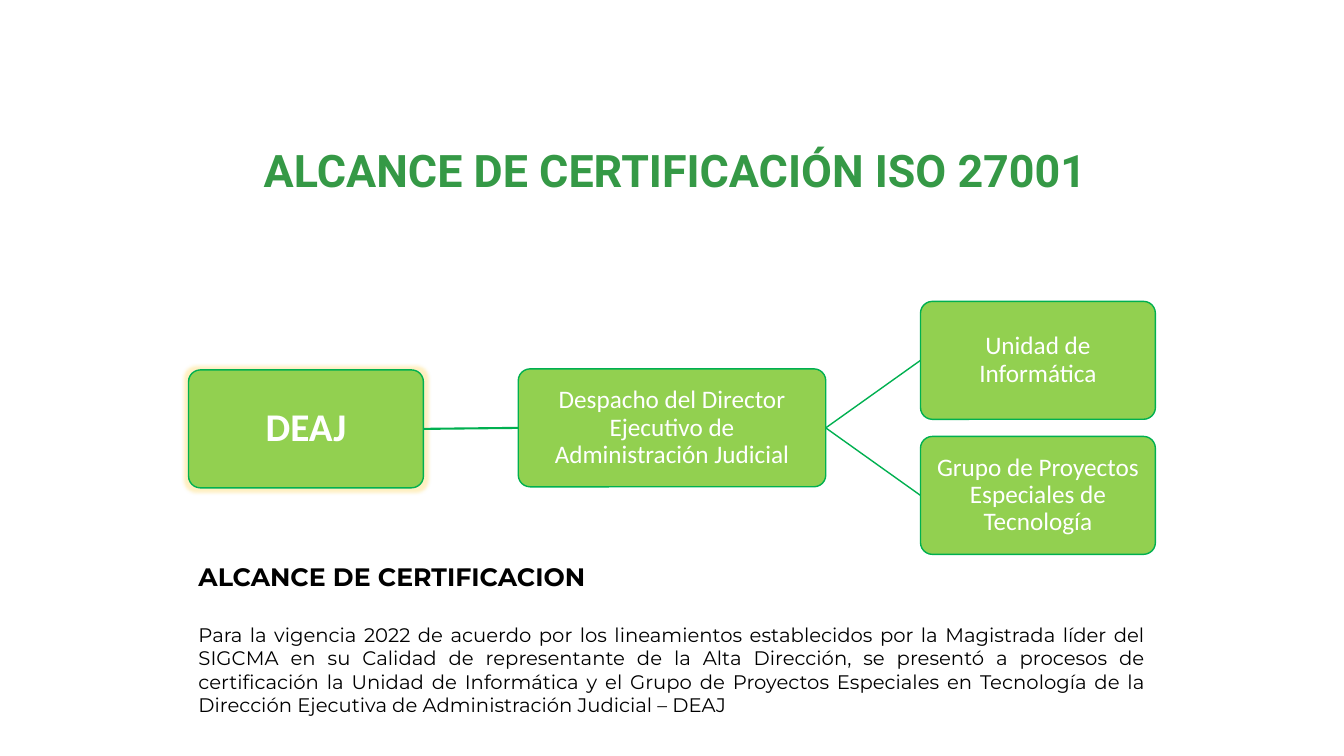
from dataclasses import dataclass

from lxml import etree
from pptx import Presentation
from pptx import util as u
from pptx.dml.color import RGBColor
from pptx.enum import shapes, text
from pptx.oxml import ns
from pptx.shapes.autoshape import Shape
from pptx.slide import Slide
from pptx.text.text import _Paragraph as Paragraph

COLORS = {
    "title": "359946",
    "box": "92D050",
    "border": "00B050",
    "box_text": "FFFFFF",
    "body": "000000",
    "glow": "FFD966",
}
BOX_HEIGHT = 1.17
LEFT, RIGHT = 1.87, 11.46


@dataclass(frozen=True)
class Box:
    label: str
    left: float
    top: float
    width: float = 2.33
    size: int = 18
    bold: bool = False
    glow: bool = False


@dataclass(frozen=True)
class Link:
    start: int
    end: int
    width: float = 1


BOXES = [
    Box("DEAJ", LEFT, 3.67, size=28, bold=True, glow=True),
    Box("Despacho del Director Ejecutivo de Administración Judicial", 5.14, 3.66, 3.05),
    Box("Unidad de Informática", 9.13, 2.99),
    Box("Grupo de Proyectos Especiales de Tecnología", 9.13, 4.33),
]
LINKS = [Link(0, 1, 1.5), Link(1, 2), Link(1, 3)]

TITLE = "ALCANCE DE CERTIFICACIÓN ISO 27001"
HEADING = "ALCANCE DE CERTIFICACION"
BODY = (
    "Para la vigencia 2022 de acuerdo por los lineamientos establecidos por la "
    "Magistrada líder del SIGCMA en su Calidad de representante de la Alta Dirección, "
    "se presentó a procesos de certificación la Unidad de Informática y el Grupo de "
    "Proyectos Especiales en Tecnología de la Dirección Ejecutiva de Administración "
    "Judicial – DEAJ"
)


def color(name: str) -> RGBColor:
    return RGBColor.from_string(COLORS[name])


def format_paragraph(paragraph: Paragraph, font_name: str, size: float,
                     color_name: str, bold: bool = False) -> None:
    for run in paragraph.runs:
        run.font.name = font_name
        run.font.size = u.Pt(size)
        run.font.bold = bold
        run.font.color.rgb = color(color_name)


def add_glow(shape: Shape) -> None:
    effects = shape._element.spPr.find(ns.qn("a:effectLst"))
    glow = etree.SubElement(effects, ns.qn("a:glow"), rad=str(u.Pt(5)))
    glow_color = etree.SubElement(glow, ns.qn("a:srgbClr"), val=COLORS["glow"])
    etree.SubElement(glow_color, ns.qn("a:alpha"), val="40000")


def add_box(slide: Slide, box: Box) -> Shape:
    shape = slide.shapes.add_shape(
        shapes.MSO_SHAPE.ROUNDED_RECTANGLE, u.Inches(box.left), u.Inches(box.top),
        u.Inches(box.width), u.Inches(BOX_HEIGHT))
    shape.adjustments[0] = 0.1
    shape.shadow.inherit = False
    shape.fill.solid()
    shape.fill.fore_color.rgb = color("box")
    shape.line.color.rgb = color("border")
    shape.line.width = u.Pt(1)
    if box.glow:
        add_glow(shape)
    frame = shape.text_frame
    frame.text = box.label
    frame.word_wrap = True
    frame.vertical_anchor = text.MSO_ANCHOR.MIDDLE
    frame.margin_left = frame.margin_right = u.Inches(0.08)
    frame.margin_top = frame.margin_bottom = u.Inches(0.05)
    paragraph = frame.paragraphs[0]
    paragraph.alignment = text.PP_ALIGN.CENTER
    paragraph.line_spacing = 0.9
    format_paragraph(paragraph, "Calibri", box.size, "box_text", box.bold)
    return shape


def add_link(slide: Slide, link: Link, boxes: list[Shape]) -> None:
    connector = slide.shapes.add_connector(shapes.MSO_CONNECTOR.STRAIGHT, 0, 0, 0, 0)
    connector.begin_connect(boxes[link.start], 3)
    connector.end_connect(boxes[link.end], 1)
    connector.line.color.rgb = color("border")
    connector.line.width = u.Pt(link.width)
    etree.SubElement(connector._element.spPr, ns.qn("a:effectLst"))


def add_title(slide: Slide) -> None:
    title = slide.shapes.add_textbox(
        u.Inches(0.07), u.Inches(1.45), u.Inches(13.26), u.Inches(0.53))
    frame = title.text_frame
    frame.text = TITLE
    frame.word_wrap = True
    frame.vertical_anchor = text.MSO_ANCHOR.MIDDLE
    paragraph = frame.paragraphs[0]
    paragraph.alignment = text.PP_ALIGN.CENTER
    paragraph.line_spacing = 0.9
    format_paragraph(paragraph, "Roboto", 32, "title", True)


def add_scope(slide: Slide) -> None:
    scope = slide.shapes.add_textbox(
        u.Inches(LEFT), u.Inches(5.52), u.Inches(RIGHT - LEFT), u.Inches(1.41))
    frame = scope.text_frame
    frame.text = HEADING
    frame.word_wrap = True
    format_paragraph(frame.paragraphs[0], "Montserrat", 18, "body", True)
    paragraph = frame.add_paragraph()
    paragraph.text = BODY
    paragraph.alignment = text.PP_ALIGN.JUSTIFY
    paragraph.space_before = u.Pt(22)
    format_paragraph(paragraph, "Montserrat", 14, "body")


def main() -> None:
    presentation = Presentation()
    presentation.slide_width = u.Inches(13.33)
    presentation.slide_height = u.Inches(7.5)
    slide = presentation.slides.add_slide(presentation.slide_layouts[6])
    add_title(slide)
    boxes = [add_box(slide, box) for box in BOXES]
    for link in LINKS:
        add_link(slide, link, boxes)
    add_scope(slide)
    presentation.save("out.pptx")


if __name__ == "__main__":
    main()
